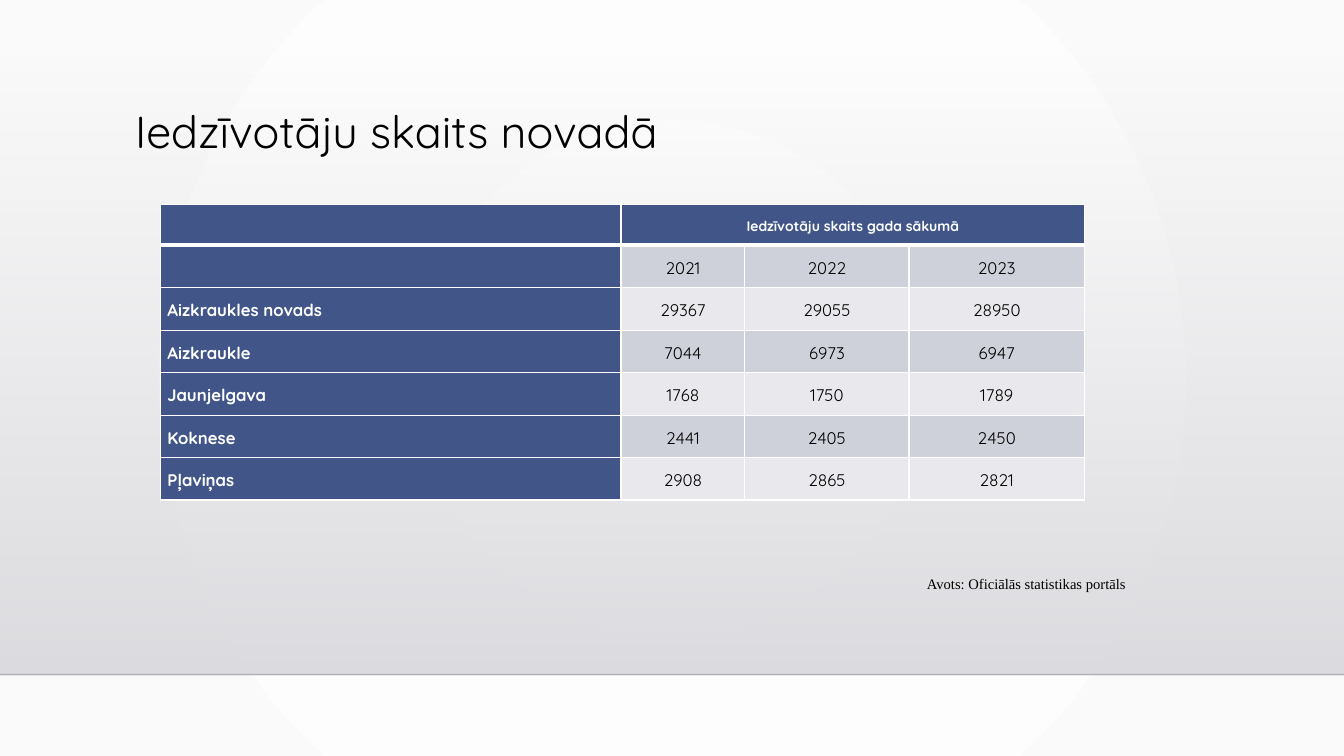
from dataclasses import dataclass

from lxml import etree
from pptx import Presentation
from pptx.dml.color import RGBColor as Rgb
from pptx.enum.shapes import MSO_CONNECTOR as Link, MSO_SHAPE as Form
from pptx.enum.text import MSO_ANCHOR as Anchor, MSO_AUTO_SIZE as Fit, PP_ALIGN as Align
from pptx.oxml import parse_xml
from pptx.oxml.ns import nsdecls, qn
from pptx.util import Cm, Pt


@dataclass(frozen=True)
class Theme:
    ink: str = "000000"
    white: str = "FFFFFF"
    pale: str = "FAFAFA"
    blue: str = "415588"
    dark: str = "CFD1DA"
    light: str = "E9E9ED"
    mist: str = "DCDCE0"
    fog: str = "DEDEE2"
    rule: str = "000001"
    sans: str = "Quicksand"
    serif: str = "Times New Roman"
    title: int = 32
    head: int = 10
    body: int = 12
    note: int = 18


theme = Theme()


def put(text, frame, size, color=theme.ink, face=theme.sans, bold=False,
        align=Align.LEFT, space=1.0, after=0, raised=0):
    line = frame.paragraphs[0]
    line.alignment = align
    line.line_spacing = space
    line.space_after = Pt(after)
    run = line.add_run()
    run.text = text
    font = run.font
    font.size = Pt(size)
    font.name = face
    font.bold = bold
    font.color.rgb = Rgb.from_string(color)
    if raised:
        run._r.get_or_add_rPr().set("baseline", str(raised * 1000))


def fade(fill, first, last):
    fill.gradient()
    for stop, color in zip(fill.gradient_stops, (first, last)):
        stop.color.rgb = Rgb.from_string(color)


deck = Presentation()
deck.slide_width, deck.slide_height = Cm(33.87), Cm(19.05)
slide = deck.slides.add_slide(deck.slide_layouts[5])
shapes = slide.shapes

back = slide.background
fade(back.fill, theme.white, theme.pale)
grad = next(back._cSld.iter(qn("a:gradFill")))
grad.replace(grad.find(qn("a:lin")), parse_xml(
    f'<a:path {nsdecls("a")} path="circle">'
    '<a:fillToRect l="50000" t="50000" r="50000" b="50000"/></a:path>'))

floor = Cm(17)
panel = shapes.add_shape(Form.RECTANGLE, 0, Cm(1.3), deck.slide_width, floor - Cm(1.3))
panel.shadow.inherit = False
panel.line.fill.background()
fade(panel.fill, theme.mist, theme.fog)
panel.fill.gradient_angle = 270
clear = next(panel._element.iter(qn("a:srgbClr")))
etree.SubElement(clear, qn("a:alpha"), val="0")

edge = shapes.add_connector(Link.STRAIGHT, 0, floor, deck.slide_width, floor)
edge.line.width = Pt(1)
edge.line.color.rgb = Rgb.from_string(theme.rule)
etree.SubElement(next(edge._element.iter(qn("a:srgbClr"))), qn("a:alpha"), val="20000")
etree.SubElement(edge._element.spPr, qn("a:effectLst"))

title = shapes.title
title.left, title.top, title.width, title.height = Cm(3.15), Cm(2.64), Cm(26.67), Cm(2.92)
frame = title.text_frame
frame.auto_size = Fit.NONE
frame.vertical_anchor = Anchor.TOP
put("Iedzīvotāju skaits novadā", frame, theme.title, space=0.9)
shapes._spTree.append(title._element)

rows = [
    ("", "Iedzīvotāju skaits gada sākumā", "", ""),
    ("", "2021", "2022", "2023"),
    ("Aizkraukles novads", "29367", "29055", "28950"),
    ("Aizkraukle", "7044", "6973", "6947"),
    ("Jaunjelgava", "1768", "1750", "1789"),
    ("Koknese", "2441", "2405", "2450"),
    ("Pļaviņas", "2908", "2865", "2821"),
]
wide = [11.61, 3.12, 4.14, 4.42]
grid = shapes.add_table(len(rows), len(wide), Cm(4.04), Cm(5.16),
                        Cm(sum(wide)), Cm(7.4)).table
for col, width in zip(grid.columns, wide):
    col.width = Cm(width)
grid.cell(0, 1).merge(grid.cell(0, 3))

for r, row in enumerate(rows):
    grid.rows[r].height = Cm(1.07 if r else 1.02)
    for c, text in enumerate(row):
        cell = grid.cell(r, c)
        cell.margin_left = cell.margin_right = Cm(0.18)
        cell.margin_top = cell.margin_bottom = 0
        cell.vertical_anchor = Anchor.MIDDLE
        head = r == 0 or c == 0
        shade = theme.blue if head else theme.dark if r % 2 else theme.light
        cell.fill.solid()
        cell.fill.fore_color.rgb = Rgb.from_string(shade)
        thick = {(0, "B"), (1, "T")}
        for n, side in enumerate("LRTB"):
            points = 3 if (r, side) in thick else 1
            cell._tc.tcPr.insert(n, parse_xml(
                f'<a:ln{side} {nsdecls("a")} w="{Pt(points)}"><a:solidFill>'
                f'<a:srgbClr val="{theme.white}"/></a:solidFill></a:ln{side}>'))
        if text:
            put(text, cell.text_frame, theme.body if r else theme.head,
                color=theme.white if head else theme.ink, bold=head,
                align=Align.CENTER if c else Align.JUSTIFY, space=1.15, after=10)

note = shapes.add_textbox(Cm(23.11), Cm(14.28), Cm(10.5), Cm(0.84))
note.text_frame.word_wrap = True
put("Avots: Oficiālās statistikas portāls", note.text_frame, theme.note,
    face=theme.serif, align=Align.JUSTIFY, raised=30)

deck.save("out.pptx")
